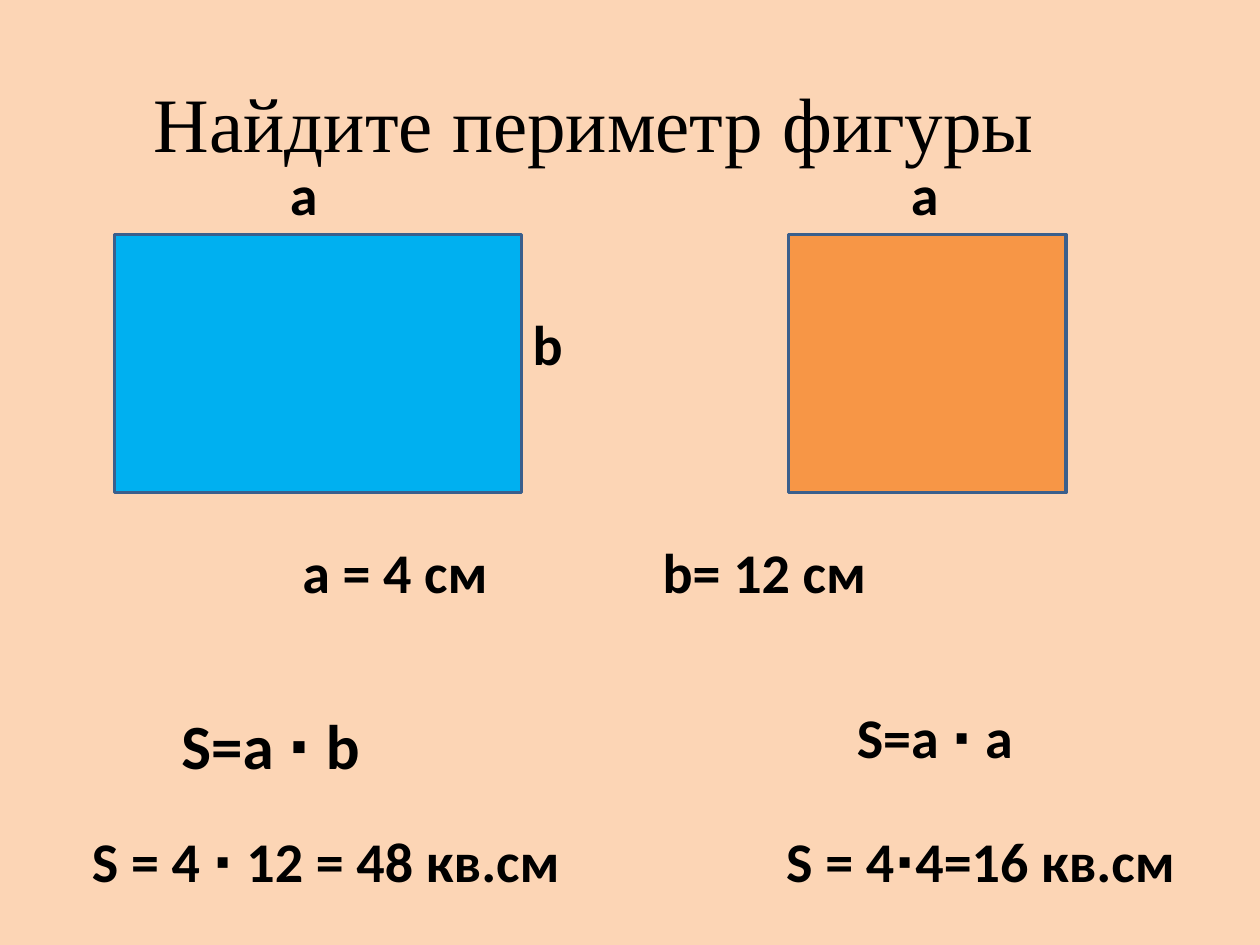
from pptx import Presentation
from pptx.dml.color import RGBColor
from pptx.enum.shapes import MSO_SHAPE
from pptx.enum.text import MSO_ANCHOR, MSO_AUTO_SIZE, PP_ALIGN
from pptx.oxml.xmlchemy import OxmlElement as make_element
from pptx.util import Inches, Pt

INSET = 0.1
FIGURE_TOP, FIGURE_HEIGHT = 1.86, 2.05
LABEL_TOP, ANSWER_TOP = 1.22, 6.51
LINE_HEIGHT = 0.64


def color(value):
    """Return the colour for a hex string."""
    return RGBColor.from_string(value)


def add_run(paragraph, text, size, font_name, bold):
    """Add a black run to a paragraph."""
    run = paragraph.add_run()
    run.text = text
    run.font.name = font_name
    run.font.size = Pt(size)
    run.font.bold = bold
    run.font.color.rgb = color("000000")


def add_tab_stop(paragraph, position):
    """Give a paragraph one left tab stop."""
    tab_list = make_element("a:tabLst")
    tab = make_element("a:tab")
    tab.set("pos", str(Inches(position)))
    tab.set("algn", "l")
    tab_list.append(tab)
    paragraph._p.get_or_add_pPr().append(tab_list)


def set_title(slide, text):
    """Place and fill the slide title."""
    title = slide.shapes.title
    title.left, title.top = Inches(0.78), Inches(0.55)
    title.width, title.height = Inches(8.75), Inches(0.84)
    frame = title.text_frame
    frame.auto_size = MSO_AUTO_SIZE.NONE
    frame.vertical_anchor = MSO_ANCHOR.TOP
    frame.margin_left = Inches(INSET + 0.34)
    paragraph = frame.paragraphs[0]
    paragraph.alignment = PP_ALIGN.LEFT
    add_run(paragraph, text, 44, "Times New Roman", False)


def add_figure(slide, left, width, fill):
    """Add an outlined rectangle on the row of figures."""
    shape = slide.shapes.add_shape(
        MSO_SHAPE.RECTANGLE, Inches(left), Inches(FIGURE_TOP),
        Inches(width), Inches(FIGURE_HEIGHT))
    shape.shadow.inherit = False
    shape.fill.solid()
    shape.fill.fore_color.rgb = color(fill)
    shape.line.color.rgb = color("3A5F8C")
    shape.line.width = Pt(2)


def add_text(slide, text, left, top, width, indent=0, size=32, height=LINE_HEIGHT, tab=None):
    """Add a bold line of text, indented inside its box."""
    box = slide.shapes.add_textbox(Inches(left), Inches(top), Inches(width), Inches(height))
    frame = box.text_frame
    frame.word_wrap = True
    frame.auto_size = MSO_AUTO_SIZE.SHAPE_TO_FIT_TEXT
    frame.margin_left = Inches(INSET + indent)
    paragraph = frame.paragraphs[0]
    if tab is not None:
        add_tab_stop(paragraph, tab)
    add_run(paragraph, text, size, "Calibri", True)


def main():
    """Build the slide and save it."""
    presentation = Presentation()
    presentation.slide_width, presentation.slide_height = Inches(10), Inches(7.5)
    slide = presentation.slides.add_slide(presentation.slide_layouts[5])
    slide.background.fill.solid()
    slide.background.fill.fore_color.rgb = color("FCD5B5")

    set_title(slide, "Найдите периметр фигуры")
    add_figure(slide, 0.91, 3.23, "00B0F0")
    add_figure(slide, 6.26, 2.2, "F79646")

    add_text(slide, "a", 1.3, LABEL_TOP, 1.81, indent=0.9)
    add_text(slide, "a", 6.73, LABEL_TOP, 1.34, indent=0.4)
    add_text(slide, "b", 4.13, 2.41, 0.47)
    add_text(slide, "a = 4 см\tb= 12 см", 1.3, 4.22, 5.83, indent=1, tab=2.86)
    add_text(slide, "S=a ∙ b", 1.12, 5.56, 3.07, indent=0.22, size=36, height=0.71)
    add_text(slide, "S=a ∙ a", 6.3, 5.53, 2.2, indent=0.4)
    add_text(slide, "S = 4 ∙ 12 = 48 кв.см", 0.43, ANSWER_TOP, 4.49, indent=0.2)
    add_text(slide, "S = 4∙4=16 кв.см", 5.94, ANSWER_TOP, 3.66, indent=0.2)
    presentation.save("out.pptx")


if __name__ == "__main__":
    main()
